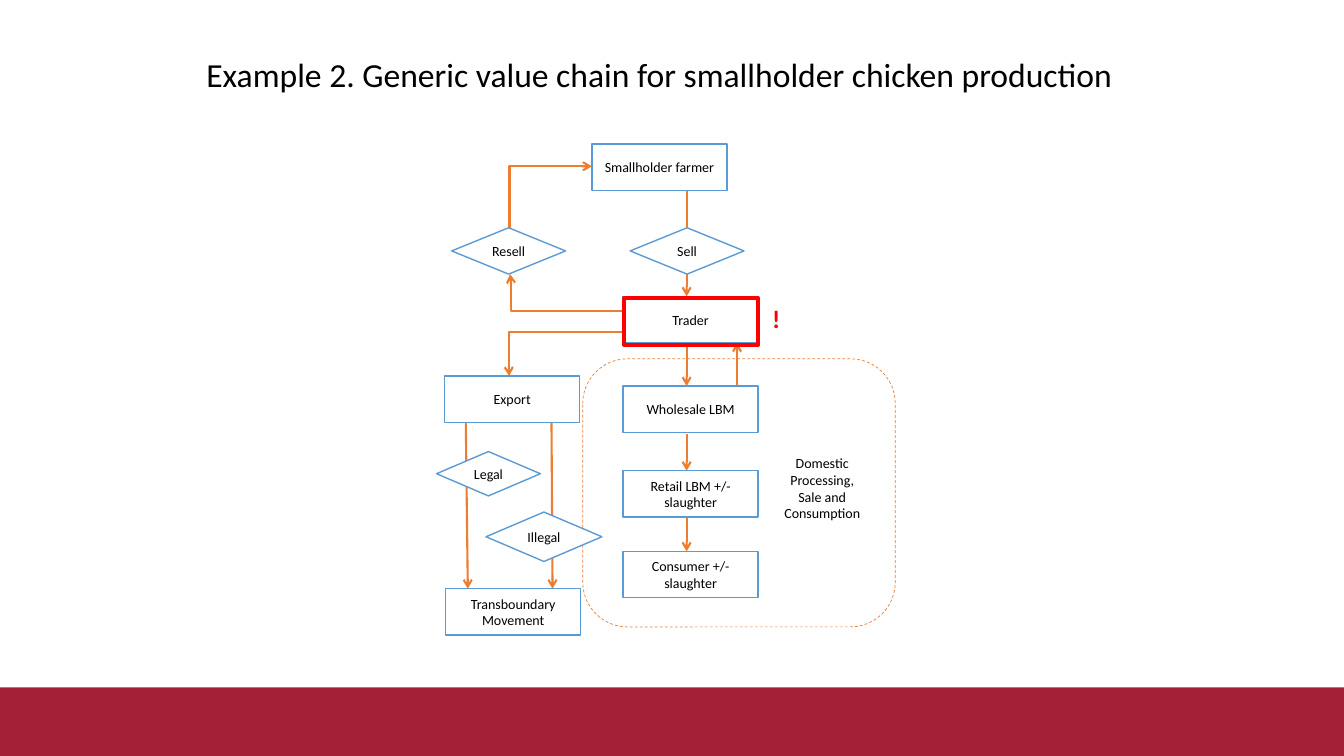
from dataclasses import dataclass

from lxml import etree
from pptx import Presentation
from pptx.dml.color import RGBColor
from pptx.enum.dml import MSO_LINE
from pptx.enum.shapes import MSO_CONNECTOR, MSO_SHAPE
from pptx.enum.text import MSO_ANCHOR, MSO_AUTO_SIZE, PP_ALIGN
from pptx.oxml.ns import qn
from pptx.util import Pt

PX = 9144
BOX = MSO_SHAPE.FLOWCHART_PROCESS
GEM = MSO_SHAPE.FLOWCHART_DECISION
RECT = MSO_SHAPE.RECTANGLE
ROUND = MSO_SHAPE.ROUNDED_RECTANGLE
DASH = MSO_LINE.DASH
LINE = MSO_CONNECTOR.STRAIGHT
ELBOW = MSO_CONNECTOR.ELBOW
MIDDLE = MSO_ANCHOR.MIDDLE
TOP = MSO_ANCHOR.TOP
CENTER = PP_ALIGN.CENTER
LEFT = PP_ALIGN.LEFT
GROW = MSO_AUTO_SIZE.SHAPE_TO_FIT_TEXT
BOX_SIZE = (134, 46)
GEM_SIZE = (113, 46)
TITLE_ONLY = 5


@dataclass(frozen=True)
class Theme:
    """Colours, font and type sizes of the slide."""
    font: str = "Calibri"
    ink: str = "000000"
    paper: str = "FFFFFF"
    band: str = "A42036"
    edge: str = "5B9BD5"
    flow: str = "ED7D31"
    alert: str = "FF0000"
    title: int = 24
    label: int = 10
    mark: int = 18


THEME = Theme()

STEPS = [
    (BOX, "Smallholder farmer", 587, 143, BOX_SIZE),
    (GEM, "Resell", 448, 226, GEM_SIZE),
    (GEM, "Sell", 625, 226, GEM_SIZE),
    (BOX, "Trader", 618, 294, BOX_SIZE),
    (BOX, "Wholesale LBM", 618, 383, BOX_SIZE),
    (BOX, "Retail LBM +/- slaughter", 618, 467, BOX_SIZE),
    (BOX, "Consumer +/- slaughter", 618, 547, BOX_SIZE),
    (BOX, "Export", 441, 373, BOX_SIZE),
    (BOX, "Transboundary Movement", 442, 584, BOX_SIZE),
    (GEM, "Legal", 433, 448, (103, 44)),
    (GEM, "Illegal", 482, 508, (115, 49)),
]

FLOWS = [
    (681, 189, 681, 294),
    (681, 340, 681, 383),
    (681, 431, 681, 467),
    (681, 512, 681, 547),
    (731, 383, 731, 340),
    (462, 418, 464, 584),
    (547, 418, 548, 584),
]

BENDS = [
    (504, 228, 587, 165, 1700),
    (619, 309, 506, 272, 99200),
    (619, 329, 505, 373, 100300),
]


def scale(*sizes):
    """Turn px lengths into EMU."""
    return [size * PX for size in sizes]


def write(frame, text, size, color=THEME.ink, align=CENTER, anchor=TOP, bold=False):
    """Put one formatted run into a text frame."""
    frame.word_wrap = True
    frame.vertical_anchor = anchor
    line = frame.paragraphs[0]
    line.alignment = align
    run = line.add_run()
    run.text = text
    run.font.name = THEME.font
    run.font.size = Pt(size)
    run.font.bold = bold
    run.font.color.rgb = RGBColor.from_string(color)


def add_form(slide, kind, place, fill=None, edge=None, width=1):
    """Add a preset shape with an optional fill and outline."""
    form = slide.shapes.add_shape(kind, *scale(*place))
    form.shadow.inherit = False
    if fill:
        form.fill.solid()
        form.fill.fore_color.rgb = RGBColor.from_string(fill)
    else:
        form.fill.background()
    if edge:
        form.line.color.rgb = RGBColor.from_string(edge)
        form.line.width = Pt(width)
    else:
        form.line.fill.background()
    return form


def add_step(slide, kind, text, left, top, size):
    """Add a labelled step of the value chain."""
    step = add_form(slide, kind, (left, top, *size), THEME.paper, THEME.edge)
    write(step.text_frame, text, THEME.label, anchor=MIDDLE)


def add_flow(slide, kind, ends, bend=None):
    """Add an arrow, with the place of its bend if it has one."""
    flow = slide.shapes.add_connector(kind, *scale(*ends))
    flow.line.color.rgb = RGBColor.from_string(THEME.flow)
    flow.line.width = Pt(1.5)
    props = flow.element.spPr
    etree.SubElement(props.find(qn("a:ln")), qn("a:tailEnd"), type="arrow")
    etree.SubElement(props, qn("a:effectLst"))
    if bend is not None:
        guides = props.find(qn("a:prstGeom")).find(qn("a:avLst"))
        etree.SubElement(guides, qn("a:gd"), name="adj1", fmla=f"val {bend}")


def add_note(slide, place, text, size, **style):
    """Add a free text box."""
    note = slide.shapes.add_textbox(*scale(*place))
    write(note.text_frame, text, size, **style)


def set_title(slide, place, text):
    """Move and fill the title placeholder."""
    title = slide.shapes.title
    title.left, title.top, title.width, title.height = scale(*place)
    write(title.text_frame, text, THEME.title)
    title.text_frame.auto_size = GROW


def main():
    """Build the slide and save it."""
    deck = Presentation()
    deck.slide_width, deck.slide_height = scale(1333, 750)
    slide = deck.slides.add_slide(deck.slide_layouts[TITLE_ONLY])
    add_form(slide, RECT, (0, 682, 1333, 68), THEME.band)
    set_title(slide, (168, 48, 972, 50),
              "Example 2. Generic value chain for smallholder chicken production")
    zone = add_form(slide, ROUND, (578, 356, 310, 266), edge=THEME.flow, width=0.5)
    zone.line.dash_style = DASH
    for ends in FLOWS:
        add_flow(slide, LINE, ends)
    for *ends, bend in BENDS:
        add_flow(slide, ELBOW, ends, bend)
    for step in STEPS:
        add_step(slide, *step)
    add_note(slide, (764, 446, 103, 73),
             "Domestic Processing, Sale and Consumption", THEME.label)
    add_form(slide, RECT, (619, 296, 133, 46), edge=THEME.alert, width=3)
    add_note(slide, (756, 296, 66, 40), "!", THEME.mark,
             color=THEME.alert, align=LEFT, bold=True)
    deck.save("out.pptx")


if __name__ == "__main__":
    main()
